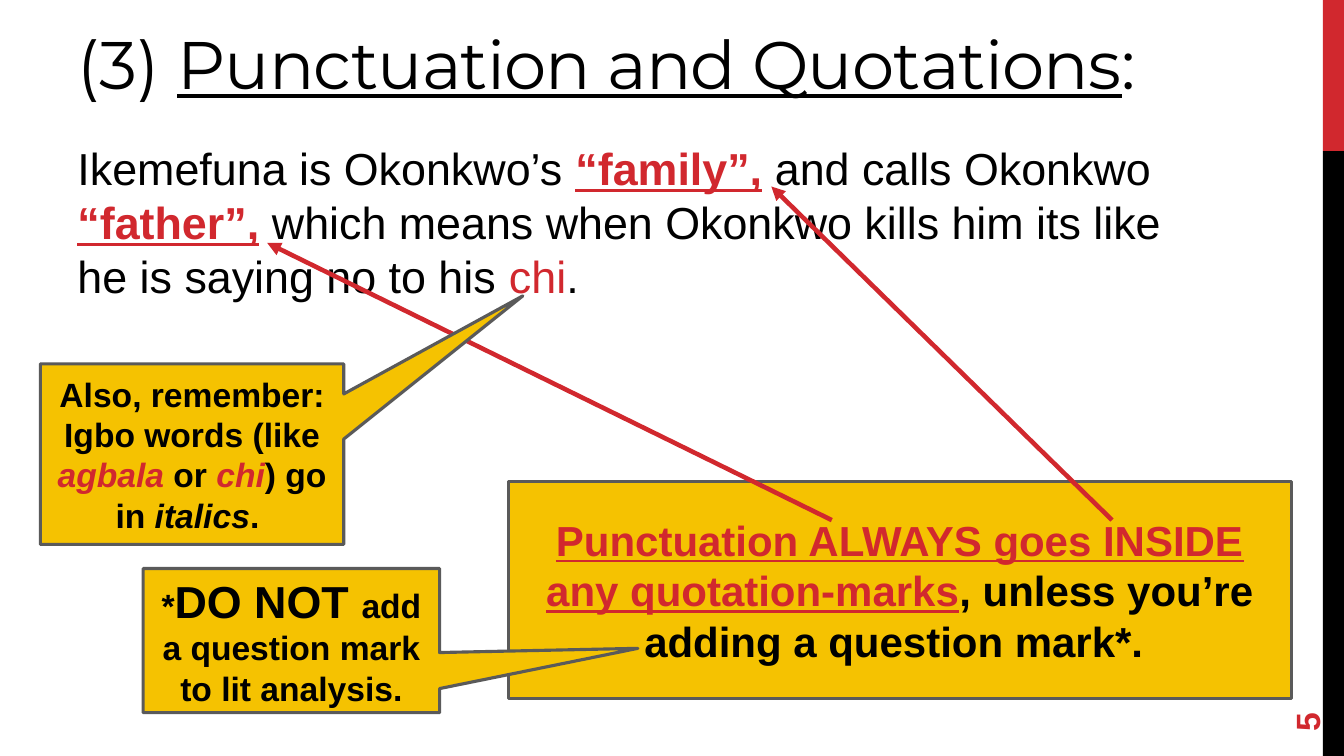
from dataclasses import dataclass

from lxml import etree
from pptx import Presentation
from pptx.dml.color import RGBColor
from pptx.enum import shapes, text
from pptx.oxml.ns import qn
from pptx.util import Inches, Pt


@dataclass(frozen=True)
class Theme:
    red: str = "D1282E"
    black: str = "000000"
    yellow: str = "F5C201"
    grey: str = "5A5A5A"
    heading_font: str = "Montserrat"
    body_font: str = "Arial"
    heading: int = 48
    body: int = 32
    rule: int = 30
    note: int = 24
    outline: float = 2.25
    arrow: float = 3.25


class LessonSlide:
    def __init__(self, deck, theme):
        self.theme = theme
        self.slide = deck.slides.add_slide(deck.slide_layouts[5])

    def set_words(self, shape, runs, size, font, align, anchor, bold=False, color=None):
        """Fill a shape with one paragraph of (words, run style) pairs."""
        frame = shape.text_frame
        frame.word_wrap = True
        frame.auto_size = text.MSO_AUTO_SIZE.NONE
        frame.vertical_anchor = anchor
        paragraph = frame.paragraphs[0]
        paragraph.alignment = align
        paragraph.font.name = font
        paragraph.font.size = Pt(size)
        paragraph.font.bold = bold
        paragraph.font.color.rgb = RGBColor.from_string(color or self.theme.black)
        for words, look in runs:
            run = paragraph.add_run()
            run.text = words
            for name, value in look.items():
                if name == "color":
                    run.font.color.rgb = RGBColor.from_string(value)
                else:
                    setattr(run.font, name, value)
        return paragraph

    def title(self, box, runs):
        heading = self.slide.shapes.title
        heading.left, heading.top, heading.width, heading.height = map(Inches, box)
        paragraph = self.set_words(heading, runs, self.theme.heading, self.theme.heading_font,
                                   text.PP_ALIGN.LEFT, text.MSO_ANCHOR.TOP)
        for run_style in paragraph._p.iter(qn("a:rPr")):
            run_style.set("spc", "-60")

    def text_box(self, box, runs, size, anchor=text.MSO_ANCHOR.TOP, rotation=0, **style):
        label = self.slide.shapes.add_textbox(*map(Inches, box))
        label.rotation = rotation
        return self.set_words(label, runs, size, self.theme.body_font,
                              text.PP_ALIGN.LEFT, anchor, **style)

    def block(self, kind, box, fill):
        shape = self.slide.shapes.add_shape(kind, *map(Inches, box))
        shape.shadow.inherit = False
        shape.fill.solid()
        shape.fill.fore_color.rgb = RGBColor.from_string(fill)
        shape.line.fill.background()
        return shape

    def note(self, kind, box, runs, size, pointer=()):
        shape = self.block(kind, box, self.theme.yellow)
        shape.line.color.rgb = RGBColor.from_string(self.theme.grey)
        shape.line.width = Pt(self.theme.outline)
        for index, offset in enumerate(pointer):
            shape.adjustments[index] = offset
        self.set_words(shape, runs, size, self.theme.body_font,
                       text.PP_ALIGN.CENTER, text.MSO_ANCHOR.MIDDLE, bold=True)

    def arrow(self, start, end):
        connector = self.slide.shapes.add_connector(
            shapes.MSO_CONNECTOR.STRAIGHT, *map(Inches, start + end))
        connector.line.color.rgb = RGBColor.from_string(self.theme.red)
        connector.line.width = Pt(self.theme.arrow)
        properties = connector._element.spPr
        etree.SubElement(properties.find(qn("a:ln")), qn("a:tailEnd"), type="triangle")
        etree.SubElement(properties, qn("a:effectLst"))


def main():
    deck = Presentation()
    deck.slide_width, deck.slide_height = Inches(13.33), Inches(7.5)
    theme = Theme()
    lesson = LessonSlide(deck, theme)
    kinds = shapes.MSO_SHAPE
    plain = {}
    red = {"color": theme.red}
    underlined = {"underline": True}
    red_underlined = red | underlined
    quoted = red_underlined | {"bold": True}
    italic = {"italic": True}
    igbo = red | italic

    # Side stripe and title
    lesson.block(kinds.RECTANGLE, (13.12, 0, 0.21, 1.5), theme.red)
    lesson.block(kinds.RECTANGLE, (13.12, 1.5, 0.21, 6), theme.black)
    lesson.title((0.67, 0.17, 12.02, 1.19), [
        ("(3) ", plain), ("Punctuation and Quotations", underlined), (":", plain)])

    # Example sentence
    example = lesson.text_box((0.67, 1.35, 11.11, 2.2), [
        ("Ikemefuna is Okonkwo’s ", plain),
        ("“family”,", quoted),
        (" and calls Okonkwo ", plain),
        ("“father”,", quoted),
        (" which means when Okonkwo kills him its like he is saying no to his ", plain),
        ("chi", red),
        (".", plain)], theme.body)
    example.space_before, example.space_after = Pt(6.4), Pt(6)

    # Page number
    lesson.text_box((12.24, 6.37, 1.44, 0.53), [("5", plain)], theme.note,
                    anchor=text.MSO_ANCHOR.MIDDLE, rotation=270, bold=True, color=theme.red)

    # Punctuation rule, its exception and arrows to both examples
    lesson.note(kinds.FLOWCHART_PROCESS, (5.04, 4.78, 7.77, 2.15), [
        ("Punctuation ALWAYS goes INSIDE any quotation-marks", red_underlined),
        (", unless you’re adding a question mark*. ", plain)], theme.rule)
    lesson.arrow((11.03, 5.16), (7.65, 1.85))
    lesson.note(kinds.RECTANGULAR_CALLOUT, (1.42, 5.64, 2.94, 1.43), [
        ("*", plain),
        ("DO NOT ", {"size": Pt(theme.body)}),
        ("add a question mark to lit analysis.", plain)], theme.note, pointer=(1.169, 0.054))
    lesson.arrow((8.25, 5.16), (2.65, 2.41))

    # Reminder about Igbo words
    lesson.note(kinds.RECTANGULAR_CALLOUT, (0.4, 3.61, 3.01, 1.79), [
        ("Also, remember: Igbo words (like ", plain),
        ("agbala", igbo),
        (" or ", plain),
        ("chi", igbo),
        (") go in ", plain),
        ("italics", italic),
        (". ", plain)], theme.note, pointer=(1.09, -0.877))

    deck.save("out.pptx")


if __name__ == "__main__":
    main()
